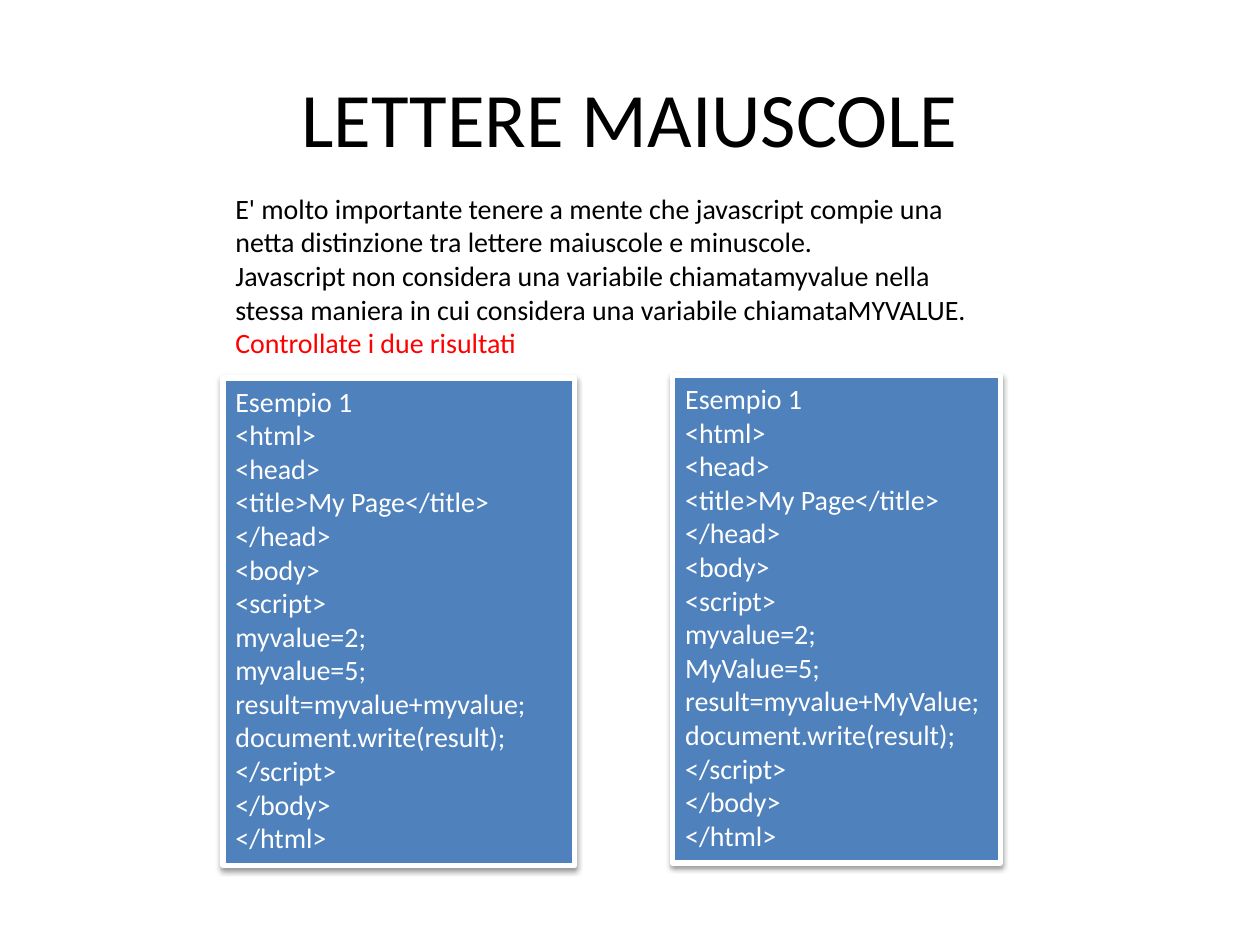
from lxml import etree
from pptx import Presentation
from pptx.dml.color import RGBColor
from pptx.enum.shapes import MSO_SHAPE
from pptx.enum.text import MSO_ANCHOR, PP_ALIGN
from pptx.oxml.ns import qn
from pptx.util import Pt

RECT = MSO_SHAPE.RECTANGLE
TOP, MIDDLE = MSO_ANCHOR.TOP, MSO_ANCHOR.MIDDLE
LEFT, CENTER = PP_ALIGN.LEFT, PP_ALIGN.CENTER

FONT = "Calibri"
BLACK, WHITE, RED, BLUE = "000000", "FFFFFF", "FF0000", "4F81BD"

TITLE = "LETTERE MAIUSCOLE"
INTRO = [
    ("E' molto importante tenere a mente che javascript compie una netta "
     "distinzione tra lettere maiuscole e minuscole.", BLACK),
    ("Javascript non considera una variabile chiamatamyvalue nella stessa "
     "maniera in cui considera una variabile chiamataMYVALUE.", BLACK),
    ("Controllate i due risultati", RED),
]
CODE = [
    "Esempio 1", "<html>", "<head>", "<title>My Page</title>", "</head>",
    "<body>", "<script>", "myvalue=2;", "{name}=5;",
    "result=myvalue+{name};", "document.write(result);",
    "</script>", "</body>", "</html>",
]
EXAMPLES = [
    ("myvalue", (127.44, 216, 200.88, 278.64)),
    ("MyValue", (384.48, 214.56, 187.2, 278.64)),
]
TITLE_BOX = (36, 21.6, 648, 90)
INTRO_BOX = (127.44, 105.84, 442.08, 104.4)
SHADOW = {"blurRad": Pt(3.1), "dist": Pt(1.6), "dir": 90 * 60000,
          "algn": "t", "rotWithShape": 0}
SHADOW_ALPHA = 38000


def rgb(value):
    return RGBColor.from_string(value)


def write(sp, lines, size=16, align=LEFT, anchor=TOP):
    tf = sp.text_frame
    for name, value in {"word_wrap": True, "vertical_anchor": anchor}.items():
        setattr(tf, name, value)
    for i, (text, color) in enumerate(lines):
        p = tf.paragraphs[0] if i == 0 else tf.add_paragraph()
        p.alignment = align
        r = p.add_run()
        r.text = text
        for name, value in {"name": FONT, "size": Pt(size)}.items():
            setattr(r.font, name, value)
        r.font.color.rgb = rgb(color)


def add_text(s, box, lines, **fmt):
    write(s.shapes.add_textbox(*map(Pt, box)), lines, **fmt)


def add_shadow(sp):
    sp.shadow.inherit = False
    effects = sp._element.spPr.find(qn("a:effectLst"))
    shadow = etree.SubElement(effects, qn("a:outerShdw"),
                              {k: str(v) for k, v in SHADOW.items()})
    color = etree.SubElement(shadow, qn("a:srgbClr"), val=BLACK)
    etree.SubElement(color, qn("a:alpha"), val=str(SHADOW_ALPHA))


def add_example(s, name, box):
    sp = s.shapes.add_shape(RECT, *map(Pt, box))
    sp.fill.solid()
    sp.fill.fore_color.rgb = rgb(BLUE)
    sp.line.color.rgb = rgb(WHITE)
    sp.line.width = Pt(3)
    add_shadow(sp)
    write(sp, [(line.format(name=name), WHITE) for line in CODE])


def main():
    prs = Presentation()
    prs.slide_width, prs.slide_height = Pt(720), Pt(540)
    s = prs.slides.add_slide(prs.slide_layouts[6])
    add_text(s, TITLE_BOX, [(TITLE, BLACK)], size=44, align=CENTER, anchor=MIDDLE)
    add_text(s, INTRO_BOX, INTRO)
    for name, box in EXAMPLES:
        add_example(s, name, box)
    prs.save("out.pptx")


if __name__ == "__main__":
    main()
